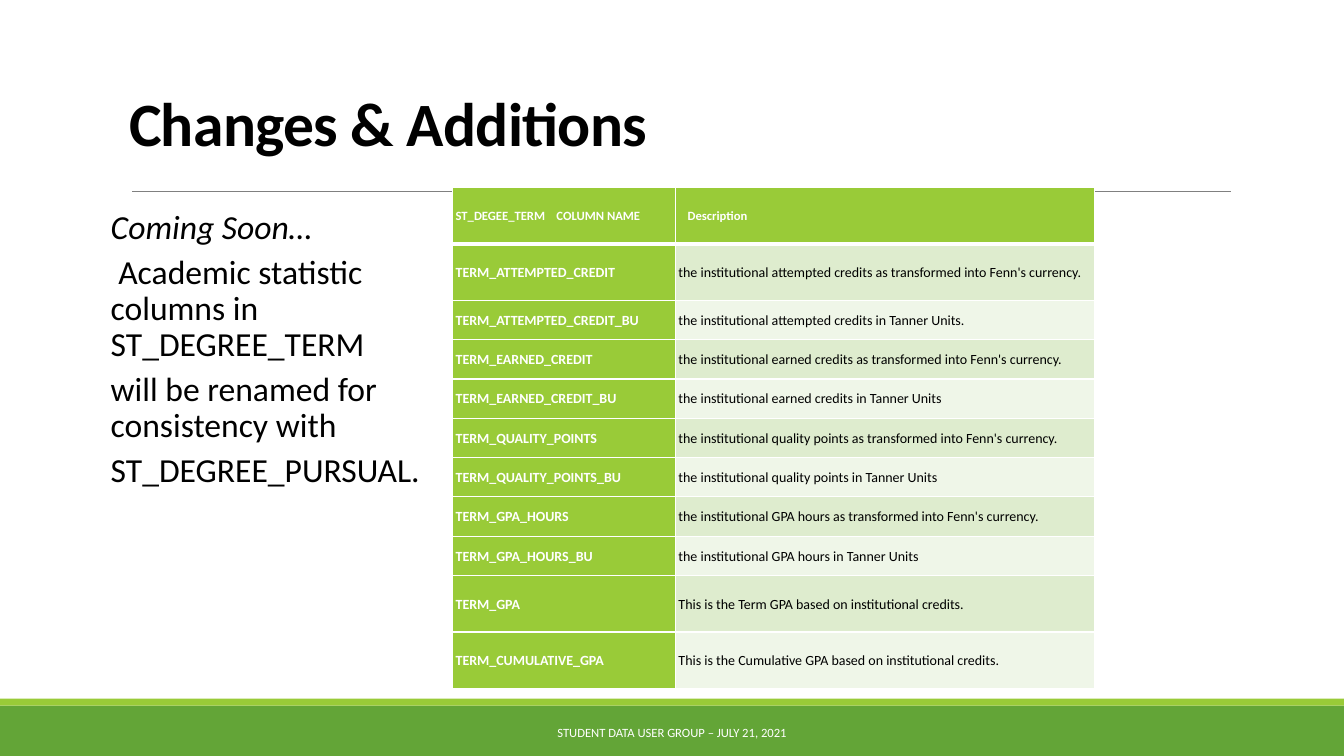
from dataclasses import dataclass

from lxml.etree import SubElement as Sub
from pptx import Presentation
from pptx.dml.color import RGBColor
from pptx.enum.shapes import MSO_CONNECTOR as Conn, MSO_SHAPE as Kind
from pptx.enum.text import MSO_ANCHOR as Anchor, MSO_AUTO_SIZE as Fit, PP_ALIGN as Align
from pptx.oxml.ns import qn
from pptx.util import Emu, Inches, Pt

FONT = "Calibri"
WHITE, BLACK, GRAY = "FFFFFF", "000000", "808080"
GREEN, LIME = "63A537", "99CB38"
BANDS = ("DEECCE", "EFF6E8")

deck = Presentation()
deck.slide_width, deck.slide_height = Inches(13.33), Inches(7.5)
slide = deck.slides.add_slide(deck.slide_layouts[5])


# The grid has 100 columns and 100 rows
def col(n: float) -> Emu:
    return Emu(round(deck.slide_width * n / 100))


def row(n: float) -> Emu:
    return Emu(round(deck.slide_height * n / 100))


@dataclass
class Box:
    x: float
    y: float
    w: float
    h: float

    def place(self) -> tuple[Emu, Emu, Emu, Emu]:
        return col(self.x), row(self.y), col(self.w), row(self.h)


@dataclass
class Bar:
    box: Box
    fill: str


@dataclass
class Look:
    size: float
    color: str = BLACK
    bold: bool = False
    italic: bool = False
    line: float = 1.0
    before: float = 0
    after: float = 0
    indent: float = 0
    align: Align = Align.LEFT


@dataclass
class Term:
    name: str
    text: str
    high: float = 5.2


def paint(hue: str) -> RGBColor:
    return RGBColor.from_string(hue)


def style(para, look: Look) -> None:
    para.alignment, para.line_spacing = look.align, look.line
    para.space_before, para.space_after = Pt(look.before), Pt(look.after)
    props = para._p.get_or_add_pPr()
    props.set("marL", str(Inches(look.indent)))
    props.set("indent", "0")
    font = para.font
    font.name, font.size = FONT, Pt(look.size)
    font.bold, font.italic = look.bold, look.italic
    font.color.rgb = paint(look.color)


def add_bar(bar: Bar) -> None:
    shape = slide.shapes.add_shape(Kind.RECTANGLE, *bar.box.place())
    shape.shadow.inherit = False
    shape.fill.solid()
    shape.fill.fore_color.rgb = paint(bar.fill)
    shape.line.fill.background()


def add_text(box: Box, lines: list[tuple[str, Look]], anchor: Anchor) -> None:
    frame = slide.shapes.add_textbox(*box.place()).text_frame
    frame.word_wrap, frame.vertical_anchor = True, anchor
    for i, (text, look) in enumerate(lines):
        para = frame.add_paragraph() if i else frame.paragraphs[0]
        para.text = text
        style(para, look)


def edge(cell, side: str, width: float) -> None:
    line = Sub(cell._tc.get_or_add_tcPr(), qn(f"a:ln{side}"), w=str(Pt(width)))
    Sub(Sub(line, qn("a:solidFill")), qn("a:srgbClr"), val=WHITE)


def fill_cell(cell, text: str, look: Look, fill: str, base: float = 1) -> None:
    for side in "LRT":
        edge(cell, side, 1)
    edge(cell, "B", base)
    cell.fill.solid()
    cell.fill.fore_color.rgb = paint(fill)
    cell.vertical_anchor = Anchor.MIDDLE
    cell.margin_left = cell.margin_right = Inches(0.03)
    cell.margin_top = cell.margin_bottom = Inches(0.03)
    para = cell.text_frame.paragraphs[0]
    para.text = text
    style(para, look)


# Footer bands
for bar in (Bar(Box(0, 93.33, 100, 6.67), GREEN), Bar(Box(0, 92.4, 100, 0.93), LIME)):
    add_bar(bar)

# Rule under the title
rule = slide.shapes.add_connector(
    Conn.STRAIGHT, col(9.83), row(25.33), col(91.6), row(25.33))
rule.line.color.rgb, rule.line.width = paint(GRAY), Pt(0.5)
Sub(rule._element.spPr, qn("a:effectLst"))

# Footer text
foot = Look(9, WHITE, align=Align.CENTER)
add_text(Box(30.23, 94.27, 39.53, 5.33),
         [("STUDENT DATA USER GROUP – JULY 21, 2021", foot)], Anchor.MIDDLE)

# Title
title = slide.shapes.title
title.left, title.top, title.width, title.height = Box(8.85, 12.4, 92.27, 9.33).place()
frame = title.text_frame
frame.text = "Changes & Additions"
frame.vertical_anchor, frame.auto_size = Anchor.BOTTOM, Fit.NONE
head = frame.paragraphs[0]
style(head, Look(44, bold=True, line=0.85))
head.runs[0]._r.get_or_add_rPr().set("spc", "-50")

# Notice on the left
body = Look(24, line=0.9, before=2, after=4, indent=0.22)
soon = Look(24, italic=True, line=0.9, before=2, after=4, indent=0.22)
add_text(Box(5.85, 27.2, 26.25, 59.2), [
    ("Coming Soon…", soon),
    (" Academic statistic columns in ST_DEGREE_TERM", body),
    ("will be renamed for consistency with", body),
    ("ST_DEGREE_PURSUAL.", body),
], Anchor.TOP)

# Table of renamed columns
TALL = 7.47
MONEY = "as transformed into Fenn's currency."
UNITS = "in Tanner Units"
terms = [
    Term("TERM_ATTEMPTED_CREDIT", f"the institutional attempted credits {MONEY}", TALL),
    Term("TERM_ATTEMPTED_CREDIT_BU", f"the institutional attempted credits {UNITS}."),
    Term("TERM_EARNED_CREDIT", f"the institutional earned credits {MONEY}"),
    Term("TERM_EARNED_CREDIT_BU", f"the institutional earned credits {UNITS}"),
    Term("TERM_QUALITY_POINTS", f"the institutional quality points {MONEY}"),
    Term("TERM_QUALITY_POINTS_BU", f"the institutional quality points {UNITS}"),
    Term("TERM_GPA_HOURS", f"the institutional GPA hours {MONEY}"),
    Term("TERM_GPA_HOURS_BU", f"the institutional GPA hours {UNITS}"),
    Term("TERM_GPA", "This is the Term GPA based on institutional credits.", TALL),
    Term("TERM_CUMULATIVE_GPA",
         "This is the Cumulative GPA based on institutional credits.", TALL),
]
wide = (16.58, 31.2)
highs = [TALL] + [term.high for term in terms]
area = Box(33.68, 24.8, sum(wide), sum(highs))
table = slide.shapes.add_table(len(highs), len(wide), *area.place()).table
for part, size in zip(table.columns, wide):
    part.width = col(size)
for part, size in zip(table.rows, highs):
    part.height = row(size)


def cell_look(size: float, color: str, bold: bool, indent: float = 0) -> Look:
    return Look(size, color, bold, line=1.07, before=3.8, after=3.8, indent=indent)


fill_cell(table.cell(0, 0), "ST_DEGEE_TERM\tCOLUMN NAME", cell_look(9, WHITE, True), LIME, 3)
fill_cell(table.cell(0, 1), "Description", cell_look(9, WHITE, True, 0.09), LIME, 3)
for i, term in enumerate(terms):
    fill_cell(table.cell(i + 1, 0), term.name, cell_look(10, WHITE, True), LIME)
    fill_cell(table.cell(i + 1, 1), term.text, cell_look(10, BLACK, False), BANDS[i % 2])

# Tab stop between the two parts of the first heading
props = table.cell(0, 0).text_frame.paragraphs[0]._p.pPr
tabs = Sub(props, qn("a:tabLst"))
Sub(tabs, qn("a:tab"), pos=str(Inches(1)), algn="l")
props.find(qn("a:defRPr")).addprevious(tabs)

deck.save("out.pptx")
